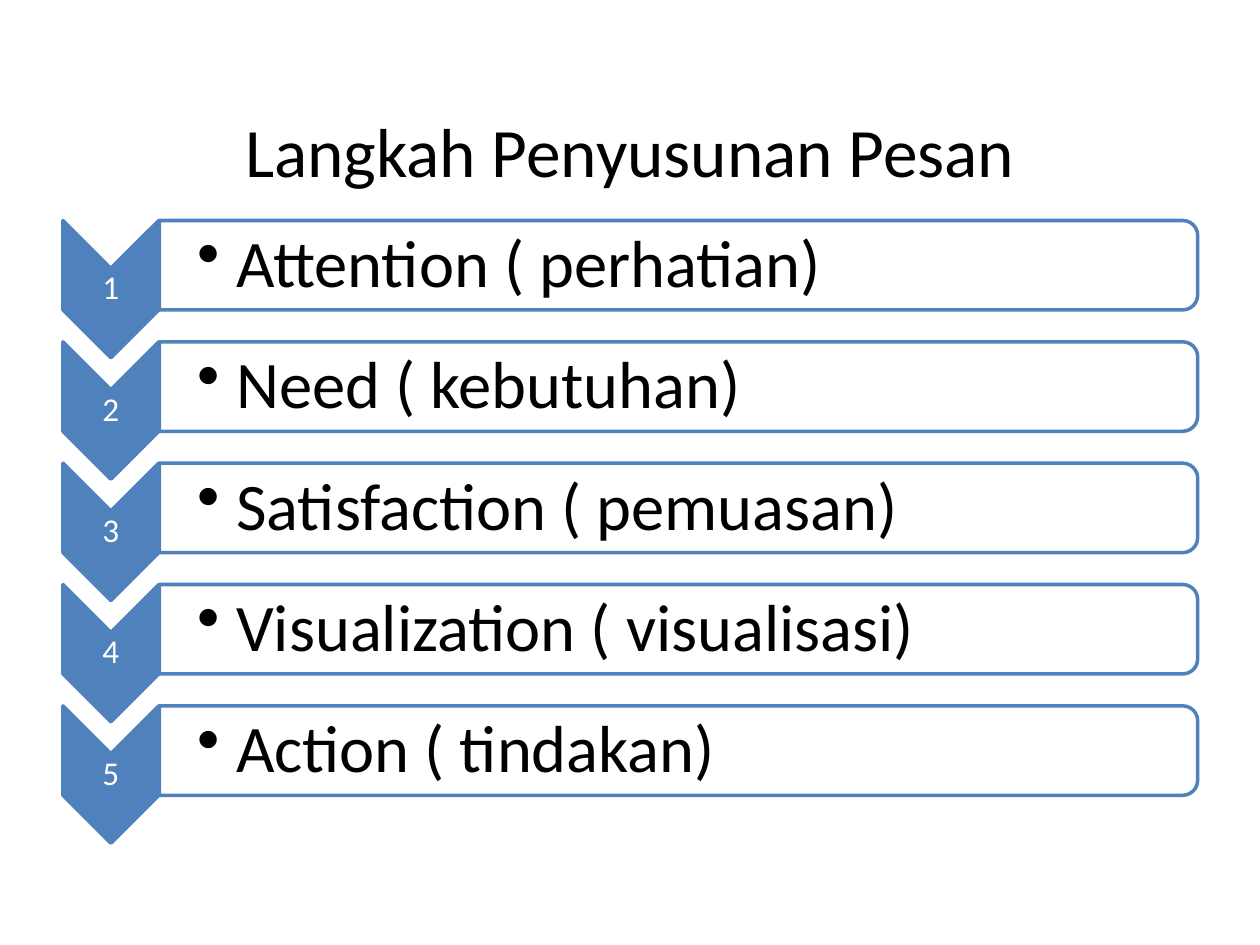
from lxml import etree
from pptx import Presentation
from pptx.dml.color import RGBColor
from pptx.enum.shapes import MSO_SHAPE
from pptx.enum.text import MSO_ANCHOR, PP_ALIGN
from pptx.oxml.ns import qn
from pptx.util import Inches, Pt

CHEVRON = MSO_SHAPE.CHEVRON
ROUNDED_BAR = MSO_SHAPE.ROUND_2_SAME_RECTANGLE
MIDDLE = MSO_ANCHOR.MIDDLE
LEFT, CENTER = PP_ALIGN.LEFT, PP_ALIGN.CENTER

TITLE_ONLY = 5
FONT = "Calibri"
BLUE, WHITE, BLACK = "4F81BD", "FFFFFF", "000000"

STEPS = [
    "Attention ( perhatian)",
    "Need ( kebutuhan)",
    "Satisfaction ( pemuasan)",
    "Visualization ( visualisasi)",
    "Action ( tindakan)",
]
FIRST_TOP = 1.75
STEP_PITCH = 0.963
CHEVRON_WIDTH, CHEVRON_HEIGHT = 0.76, 1.09
BAR_WIDTH, BAR_HEIGHT = 8.24, 0.71
CHEVRON_LEFT = 0.5
BAR_LEFT = 1.265
BULLET_INDENT = 0.31


def color(value):
    return RGBColor.from_string(value)


def write_text(shape, text, size, text_color, align):
    """Fill a shape with one formatted, vertically centred paragraph."""
    frame = shape.text_frame
    frame.word_wrap = True
    frame.vertical_anchor = MIDDLE
    frame.text = text
    para = frame.paragraphs[0]
    para.alignment = align
    font = para.runs[0].font
    font.name = FONT
    font.size = Pt(size)
    font.color.rgb = color(text_color)
    return para


def add_turned_shape(group, kind, left, top, width, height, fill):
    """Add a shape turned by 90 degrees; the box given is the one it covers."""
    shift = (width - height) / 2
    shape = group.shapes.add_shape(
        kind, Inches(left + shift), Inches(top - shift), Inches(height), Inches(width))
    shape.rotation = 90
    shape.shadow.inherit = False
    shape.fill.solid()
    shape.fill.fore_color.rgb = color(fill)
    shape.line.color.rgb = color(BLUE)
    shape.line.width = Pt(2)
    return shape


def set_opacity(shape, percent):
    fill_color = shape.fill._xPr.find(qn("a:solidFill"))[0]
    etree.SubElement(fill_color, qn("a:alpha"), val=str(percent * 1000))


def add_label(group, text, left, top, width, height, size, text_color, align,
              inset, left_inset):
    box = group.shapes.add_textbox(
        Inches(left), Inches(top), Inches(width), Inches(height))
    frame = box.text_frame
    frame.margin_left = Inches(left_inset)
    frame.margin_right = frame.margin_top = frame.margin_bottom = Inches(inset)
    para = write_text(box, text, size, text_color, align)
    para.line_spacing = 0.9
    return para


def add_bullet(para):
    para.level = 1
    properties = para._p.get_or_add_pPr()
    properties.set("marL", str(Inches(BULLET_INDENT)))
    properties.set("indent", str(-Inches(BULLET_INDENT)))
    etree.SubElement(properties, qn("a:buChar"), char="•")


def add_step(group, number, text, top):
    # Numbered chevron pointing down
    add_turned_shape(group, CHEVRON, CHEVRON_LEFT, top,
                     CHEVRON_WIDTH, CHEVRON_HEIGHT, BLUE)
    add_label(group, str(number), CHEVRON_LEFT, top + 0.38, CHEVRON_WIDTH, 0.33,
              19, WHITE, CENTER, 0.01, 0.01)

    # Bar with the step's name
    bar = add_turned_shape(group, ROUNDED_BAR, BAR_LEFT, top,
                           BAR_WIDTH, BAR_HEIGHT, WHITE)
    set_opacity(bar, 90)
    para = add_label(group, text, BAR_LEFT, top + 0.04, 8.2, 0.64,
                     38, BLACK, LEFT, 0.03, 0.3)
    add_bullet(para)


def add_title(page, text):
    title = page.shapes.title
    title.left, title.top = Inches(0.5), Inches(0.83)
    title.width, title.height = Inches(9), Inches(0.72)
    write_text(title, text, 39.6, BLACK, CENTER)


def main():
    deck = Presentation()
    deck.slide_width, deck.slide_height = Inches(10), Inches(7.5)
    page = deck.slides.add_slide(deck.slide_layouts[TITLE_ONLY])
    page.background.fill.solid()
    page.background.fill.fore_color.rgb = color(WHITE)

    add_title(page, "Langkah Penyusunan Pesan")
    group = page.shapes.add_group_shape()
    for index, text in enumerate(STEPS):
        add_step(group, index + 1, text, FIRST_TOP + index * STEP_PITCH)

    deck.save("out.pptx")


if __name__ == "__main__":
    main()
